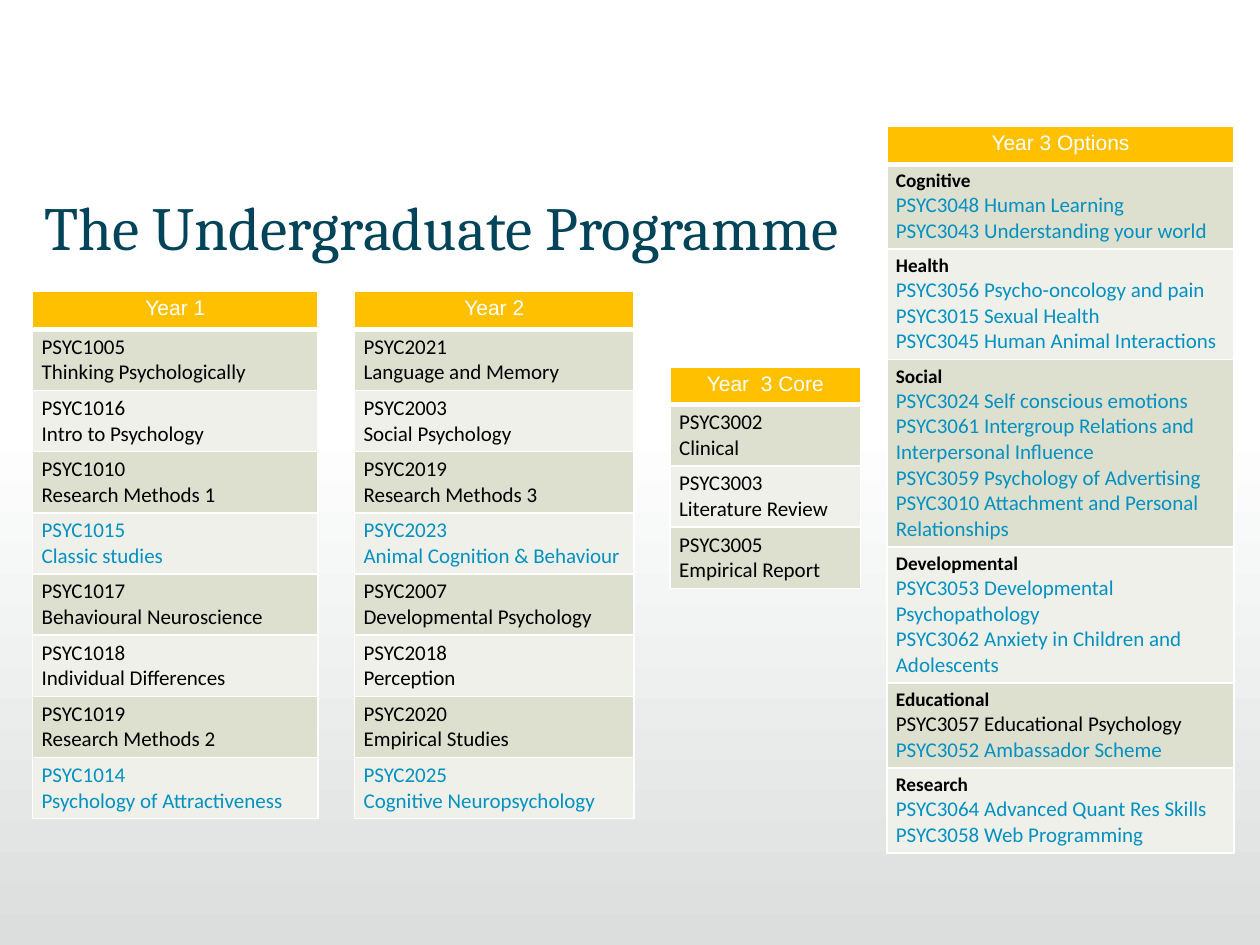
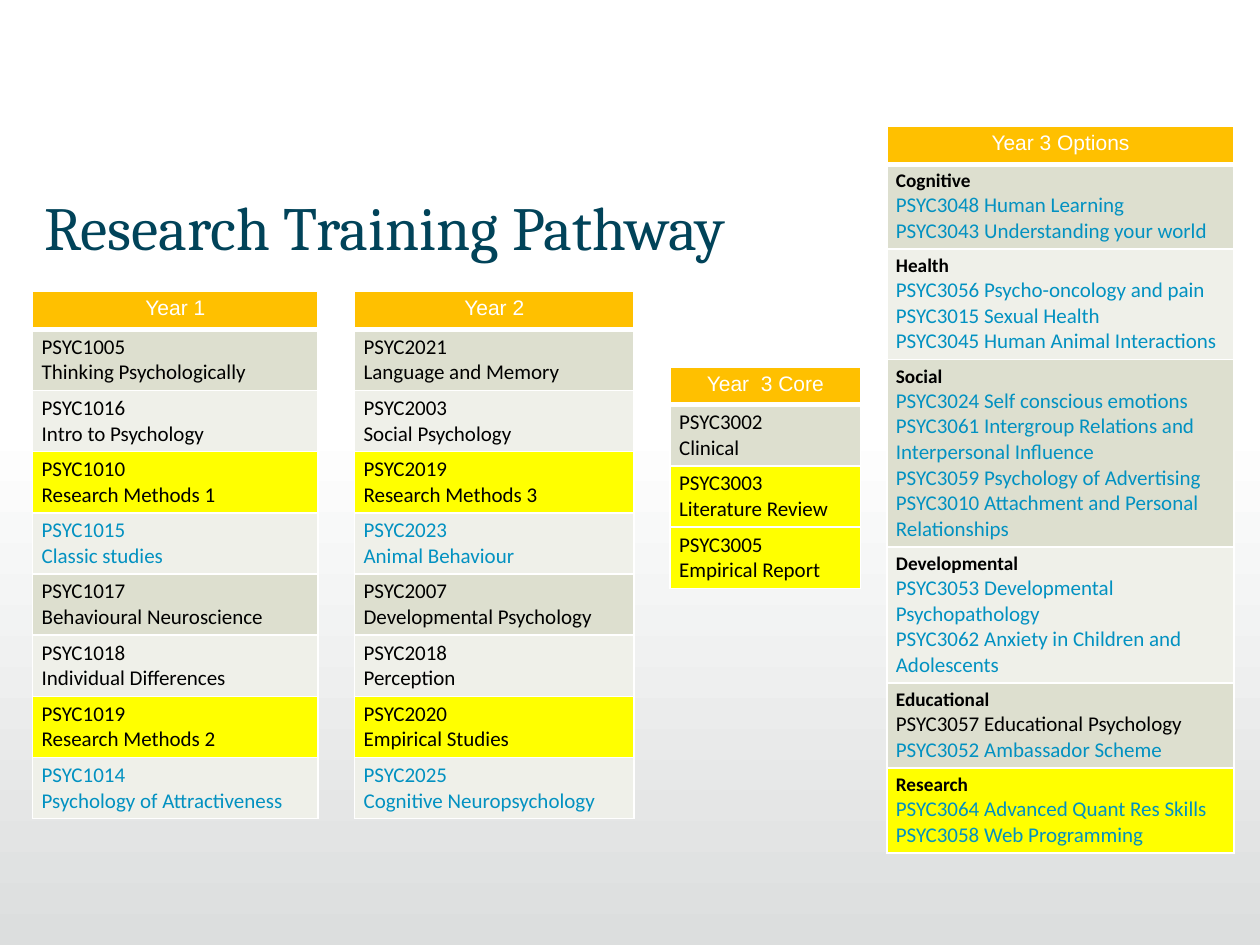
from lxml import etree
from pptx import Presentation
from pptx.dml.color import RGBColor
from pptx.enum import shapes, text
from pptx.oxml import ns
from pptx.util import Cm, Pt

TEAL, BLUE, BLACK, WHITE = "014359", "0291C1", "000000", "FFFFFF"
HEADER, BANDS, HIGHLIGHT = "FFC000", ("DDDFCF", "EFF0E9"), "FFFF00"
BAND_END = "DCDEDE"
HEADER_HEIGHT, MODULE_HEIGHT = 0.76, 1.2


def rgb(hex_colour):
    return RGBColor.from_string(hex_colour)


def core(code, name):
    return [(code, BLACK), (name, BLACK)]


def elective(code, name):
    return [(code, BLUE), (name, BLUE)]


YEAR_1 = [
    core("PSYC1005", "Thinking Psychologically"),
    core("PSYC1016", "Intro to Psychology"),
    core("PSYC1010", "Research Methods 1"),
    elective("PSYC1015", "Classic studies"),
    core("PSYC1017", "Behavioural Neuroscience"),
    core("PSYC1018", "Individual Differences"),
    core("PSYC1019", "Research Methods 2"),
    elective("PSYC1014", "Psychology of Attractiveness"),
]
YEAR_3_CORE = [
    core("PSYC3002", "Clinical"),
    core("PSYC3003", "Literature Review"),
    core("PSYC3005", "Empirical Report"),
]
YEAR_3_OPTIONS = {
    "Cognitive": [
        ("PSYC3048 Human Learning", BLUE),
        ("PSYC3043 Understanding your world", BLUE),
    ],
    "Health": [
        ("PSYC3056 Psycho-oncology and pain", BLUE),
        ("PSYC3015 Sexual Health", BLUE),
        ("PSYC3045 Human Animal Interactions", BLUE),
    ],
    "Social": [
        ("PSYC3024 Self conscious emotions", BLUE),
        ("PSYC3061 Intergroup Relations and Interpersonal Influence", BLUE),
        ("PSYC3059 Psychology of Advertising", BLUE),
        ("PSYC3010 Attachment and Personal Relationships", BLUE),
    ],
    "Developmental": [
        ("PSYC3053 Developmental Psychopathology", BLUE),
        ("PSYC3062 Anxiety in Children and Adolescents", BLUE),
    ],
    "Educational": [
        ("PSYC3057 Educational Psychology", BLACK),
        ("PSYC3052 Ambassador Scheme", BLUE),
    ],
    "Research": [
        ("PSYC3064 Advanced Quant Res Skills", BLUE),
        ("PSYC3058 Web Programming", BLUE),
    ],
}
OPTION_HEIGHTS = [1.65, 2.16, 3.68, 2.67, 1.65, 1.65]
RESEARCH_TRAINING = {
    "PSYC1010", "PSYC1019", "PSYC2019", "PSYC2020", "PSYC3003", "PSYC3005", "Research",
}


def year_2(animal_module):
    return [
        core("PSYC2021", "Language and Memory"),
        core("PSYC2003", "Social Psychology"),
        core("PSYC2019", "Research Methods 3"),
        elective("PSYC2023", animal_module),
        core("PSYC2007", "Developmental Psychology"),
        core("PSYC2018", "Perception"),
        core("PSYC2020", "Empirical Studies"),
        elective("PSYC2025", "Cognitive Neuropsychology"),
    ]


def add_run(paragraph, words, font_name, size, colour, bold=False):
    run = paragraph.add_run()
    run.text = words
    font = run.font
    font.name, font.size, font.bold = font_name, Pt(size), bold
    font.color.rgb = rgb(colour)


def next_paragraph(frame, index):
    return frame.add_paragraph() if index else frame.paragraphs[0]


def add_background_band(slide, master):
    band = slide.shapes.add_shape(
        shapes.MSO_SHAPE.RECTANGLE, Cm(0), Cm(8.46), Cm(25.4), Cm(10.59))
    band.shadow.inherit = False
    band.line.fill.background()
    band.fill.gradient()
    band.fill.gradient_angle = 270
    for stop, colour in zip(band.fill.gradient_stops, (WHITE, BAND_END)):
        stop.color.rgb = rgb(colour)
    master.shapes.element.insert(2, band.element)


def set_title(slide, words):
    title = slide.shapes.title
    title.left, title.top, title.width, title.height = Cm(0.89), Cm(3.68), Cm(23.6), Cm(1.35)
    frame = title.text_frame
    frame.auto_size = text.MSO_AUTO_SIZE.NONE
    frame.vertical_anchor = text.MSO_ANCHOR.TOP
    frame.margin_left = 0
    frame.paragraphs[0].alignment = text.PP_ALIGN.LEFT
    add_run(frame.paragraphs[0], words, "Cambria", 35, TEAL)


def set_borders(cell, bottom_width):
    properties = cell._tc.get_or_add_tcPr()
    for side, width in (("lnL", 1), ("lnR", 1), ("lnT", 1), ("lnB", bottom_width)):
        line = etree.SubElement(properties, ns.qn(f"a:{side}"), w=str(Pt(width)))
        fill = etree.SubElement(line, ns.qn("a:solidFill"))
        etree.SubElement(fill, ns.qn("a:srgbClr"), val=WHITE)


def format_cell(cell, fill_colour, bottom_width=1):
    set_borders(cell, bottom_width)
    cell.margin_left = cell.margin_right = Cm(0.18)
    cell.margin_top = cell.margin_bottom = Cm(0.1)
    cell.fill.solid()
    cell.fill.fore_color.rgb = rgb(fill_colour)


def add_year_table(slide, heading, entries, left, top, width, highlighted,
                   heights=None, grouped=False):
    row_heights = [HEADER_HEIGHT] + (heights or [MODULE_HEIGHT] * len(entries))
    table = slide.shapes.add_table(
        len(row_heights), 1, Cm(left), Cm(top), Cm(width), Cm(sum(row_heights))).table
    table.horz_banding = False
    for row, height in zip(table.rows, row_heights):
        row.height = Cm(height)

    header = table.cell(0, 0)
    format_cell(header, HEADER, 3)
    header_line = header.text_frame.paragraphs[0]
    header_line.alignment = text.PP_ALIGN.CENTER
    add_run(header_line, heading, "Arial", 12, WHITE)

    for number, lines in enumerate(entries):
        cell = table.cell(number + 1, 0)
        key = lines[0][0]
        format_cell(cell, HIGHLIGHT if key in highlighted else BANDS[number % 2])
        for index, (words, colour) in enumerate(lines):
            is_group = grouped and index == 0
            add_run(next_paragraph(cell.text_frame, index), words, "Calibri",
                    11 if is_group else 12, colour, is_group)


def add_programme(slide, title, animal_module, highlighted=frozenset()):
    set_title(slide, title)
    options = [[(group, BLACK)] + choices for group, choices in YEAR_3_OPTIONS.items()]
    add_year_table(slide, "Year 1", YEAR_1, 0.66, 5.88, 5.75, highlighted)
    add_year_table(slide, "Year 2", year_2(animal_module), 7.15, 5.88, 5.63, highlighted)
    add_year_table(slide, "Year  3 Core", YEAR_3_CORE, 13.51, 7.4, 3.84, highlighted)
    add_year_table(slide, "Year 3 Options", options, 17.88, 2.55, 7, highlighted,
                   OPTION_HEIGHTS, grouped=True)


def main():
    prs = Presentation()
    prs.slide_width, prs.slide_height = Cm(25.4), Cm(19.05)
    title_only = prs.slide_layouts[5]
    programme = prs.slides.add_slide(title_only)
    add_background_band(programme, prs.slide_master)
    add_programme(programme, "The Undergraduate Programme", "Animal Cognition & Behaviour")
    pathway = prs.slides.add_slide(title_only)
    add_programme(pathway, "Research Training Pathway", "Animal Behaviour", RESEARCH_TRAINING)
    prs.save("out.pptx")


if __name__ == "__main__":
    main()
